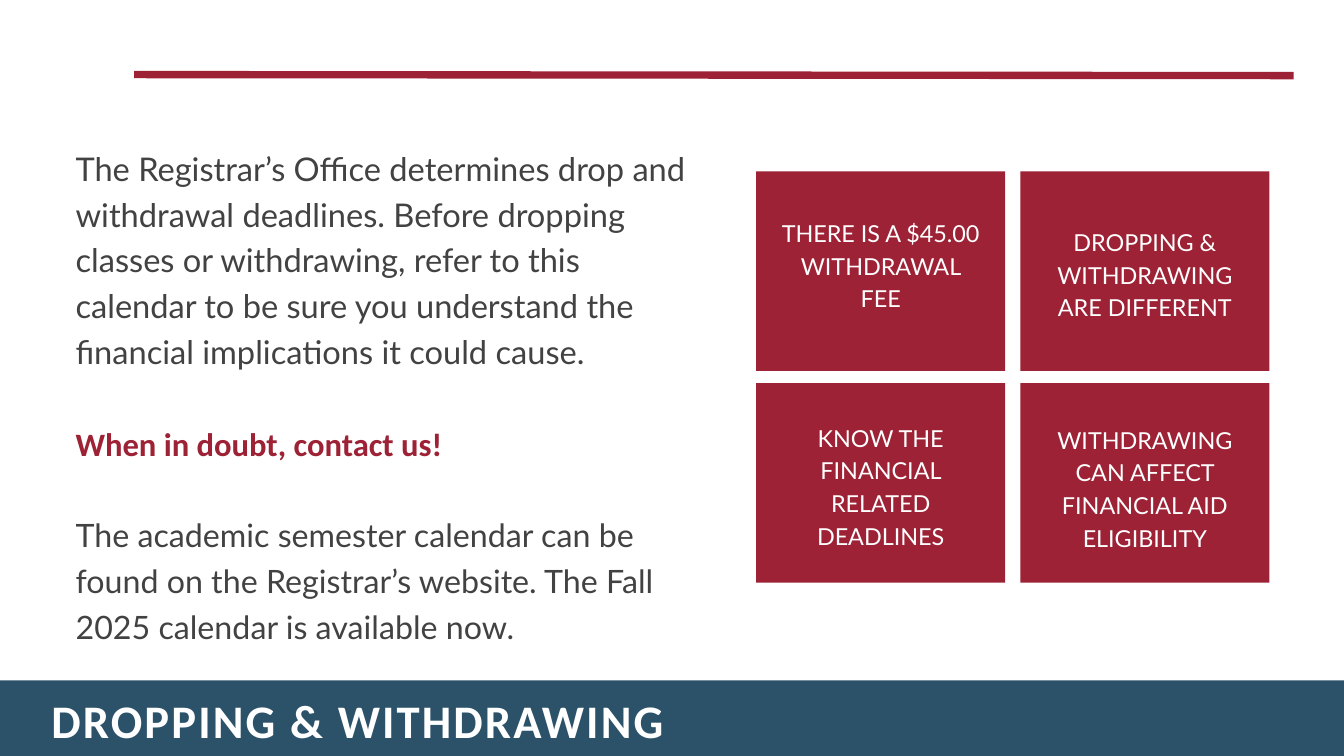
"""Build the Dropping & Withdrawing slide."""
from dataclasses import dataclass

import lxml.etree
import pptx
import pptx.dml.color
import pptx.enum.shapes
import pptx.enum.text
import pptx.oxml.ns
import pptx.slide
import pptx.text.text
import pptx.util

Inches = pptx.util.Inches
Pt = pptx.util.Pt
COLORS = {"navy": "2B5269", "crimson": "9D2235", "ink": "424242", "white": "FFFFFF"}
CARD_LEFT, CARD_TOP = 7.5, 1.7
CARD_WIDTH, CARD_HEIGHT = 2.47, 1.98
COLUMN_PITCH, ROW_PITCH = 2.62, 2.1
BODY_LEADING = 32.7


@dataclass(frozen=True)
class TextStyle:
    """Look of a paragraph."""
    font: str
    size: float
    color: str
    leading: float
    bold: bool = False
    align: pptx.enum.text.PP_ALIGN = pptx.enum.text.PP_ALIGN.LEFT


@dataclass(frozen=True)
class Card:
    """One key fact and its place in the grid."""
    text: str
    column: int
    row: int
    text_inset: float


TITLE_STYLE = TextStyle("Calibri", 33.3, "white", 46.7, bold=True)
BODY_STYLE = TextStyle("Lato", 23.3, "ink", BODY_LEADING)
CONTACT_STYLE = TextStyle("Calibri", 23.3, "crimson", BODY_LEADING, bold=True)
CALENDAR_STYLE = TextStyle("Lato", 23, "ink", BODY_LEADING)
CARD_STYLE = TextStyle("Lato", 16.7, "white", 23.3, align=pptx.enum.text.PP_ALIGN.CENTER)

BODY = [
    ("The Registrar’s Office determines drop and withdrawal deadlines. Before dropping "
     "classes or withdrawing, refer to this calendar to be sure you understand the "
     "financial implications it could cause.", BODY_STYLE),
    ("When in doubt, contact us!", CONTACT_STYLE),
    ("The academic semester calendar can be found on the Registrar’s website. "
     "The Fall 2025 calendar is available now.", CALENDAR_STYLE),
]
CARDS = [
    Card("THERE IS A $45.00 WITHDRAWAL FEE", 0, 0, 0.43),
    Card("DROPPING & WITHDRAWING ARE DIFFERENT", 1, 0, 0.52),
    Card("KNOW THE FINANCIAL RELATED DEADLINES", 0, 1, 0.36),
    Card("WITHDRAWING CAN AFFECT FINANCIAL AID ELIGIBILITY", 1, 1, 0.38),
]


def rgb(color: str) -> pptx.dml.color.RGBColor:
    """Return the named colour."""
    return pptx.dml.color.RGBColor.from_string(COLORS[color])


def set_frame(frame: pptx.text.text.TextFrame, side: float = 0, top: float = 0) -> None:
    """Wrap the text from the top, inside the given margins."""
    frame.word_wrap = True
    frame.auto_size = pptx.enum.text.MSO_AUTO_SIZE.NONE
    frame.vertical_anchor = pptx.enum.text.MSO_ANCHOR.TOP
    frame.margin_left = frame.margin_right = Inches(side)
    frame.margin_top, frame.margin_bottom = Inches(top), 0


def write(paragraph: pptx.text.text._Paragraph, text: str, style: TextStyle) -> None:
    """Fill a paragraph with styled text."""
    paragraph.text = text
    paragraph.alignment = style.align
    paragraph.line_spacing = Pt(style.leading)
    paragraph.font.name = style.font
    paragraph.font.size = Pt(style.size)
    paragraph.font.bold = style.bold
    paragraph.font.color.rgb = rgb(style.color)


def add_block(slide: pptx.slide.Slide, left: float, top: float, width: float,
              height: float, color: str) -> pptx.text.text.TextFrame:
    """Add a plain filled rectangle and return its text frame."""
    block = slide.shapes.add_shape(pptx.enum.shapes.MSO_SHAPE.RECTANGLE, Inches(left),
                                   Inches(top), Inches(width), Inches(height))
    block.shadow.inherit = False
    block.fill.solid()
    block.fill.fore_color.rgb = rgb(color)
    block.line.fill.background()
    return block.text_frame


def add_title(slide: pptx.slide.Slide) -> None:
    """Set the title on the footer band."""
    add_block(slide, 0, 6.75, 13.33, 0.75, "navy")
    title = slide.shapes.title
    title.left, title.top = Inches(0.51), Inches(6.77)
    title.width, title.height = Inches(8.56), Inches(0.62)
    set_frame(title.text_frame)
    heading = title.text_frame.paragraphs[0]
    write(heading, "DROPPING & WITHDRAWING", TITLE_STYLE)
    heading.runs[0]._r.get_or_add_rPr().set("spc", "150")
    title.element.getparent().append(title.element)


def add_rule(slide: pptx.slide.Slide) -> None:
    """Draw the line across the top."""
    rule = slide.shapes.add_connector(pptx.enum.shapes.MSO_CONNECTOR.STRAIGHT, Inches(1.33),
                                      Inches(0.74), Inches(12.83), Inches(0.75))
    rule.line.color.rgb = rgb("crimson")
    rule.line.width = Pt(5.25)
    lxml.etree.SubElement(rule.element.spPr, pptx.oxml.ns.qn("a:effectLst"))


def add_body(slide: pptx.slide.Slide) -> None:
    """Add the explanation, its paragraphs one line apart."""
    frame = slide.shapes.add_textbox(Inches(0.75), Inches(1.41), Inches(6.1),
                                     Inches(5.04)).text_frame
    set_frame(frame)
    for index, (text, style) in enumerate(BODY):
        paragraph = frame.add_paragraph() if index else frame.paragraphs[0]
        write(paragraph, text, style)
        paragraph.space_before = Pt(BODY_LEADING if index else 0)


def add_card(slide: pptx.slide.Slide, card: Card) -> None:
    """Add a key fact in its grid cell."""
    frame = add_block(slide, CARD_LEFT + card.column * COLUMN_PITCH,
                      CARD_TOP + card.row * ROW_PITCH, CARD_WIDTH, CARD_HEIGHT, "crimson")
    set_frame(frame, side=0.25, top=card.text_inset)
    write(frame.paragraphs[0], card.text, CARD_STYLE)


def main() -> None:
    """Build and save the presentation."""
    presentation = pptx.Presentation()
    presentation.slide_width, presentation.slide_height = Inches(13.33), Inches(7.5)
    slide = presentation.slides.add_slide(presentation.slide_layouts[5])
    add_title(slide)
    add_rule(slide)
    add_body(slide)
    for card in CARDS:
        add_card(slide, card)
    presentation.save("out.pptx")


if __name__ == "__main__":
    main()
